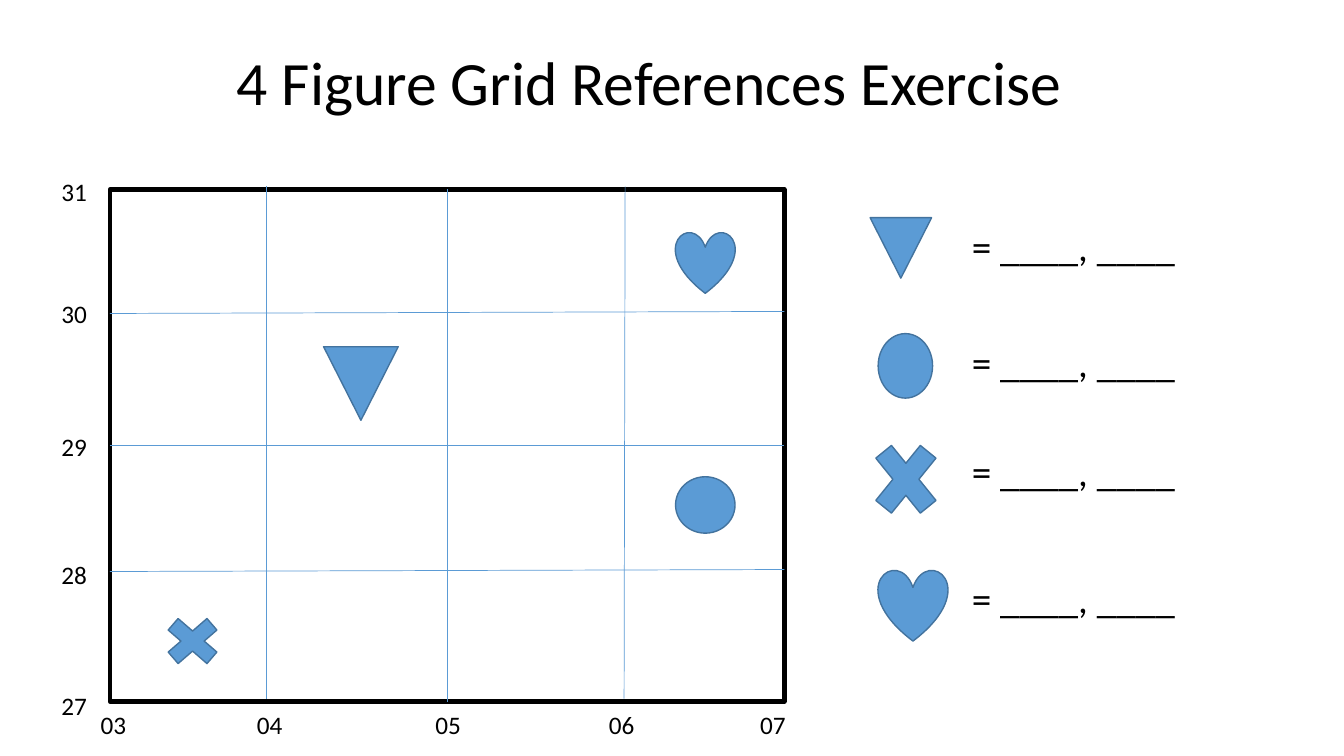
from lxml.etree import SubElement
from pptx import Presentation
from pptx.dml.color import RGBColor
from pptx.enum.shapes import MSO_CONNECTOR, MSO_SHAPE
from pptx.enum.text import MSO_ANCHOR, PP_ALIGN
from pptx.oxml.ns import qn
from pptx.util import Inches, Pt

BLACK, BLUE, EDGE = "000000", "5B9BD5", "43739E"
MERGE = MSO_SHAPE.FLOWCHART_MERGE
DISC = MSO_SHAPE.FLOWCHART_CONNECTOR
CROSS = MSO_SHAPE.MATH_MULTIPLY
HEART = MSO_SHAPE.HEART

# Offsets from the left and top of the map
COLS = [(1.55, -0.03, 1.55, 5.05), (3.35, 0, 3.35, 5.08), (5.11, -0.03, 5.1, 5.05)]
ROWS = [(0, 1.23, 6.69, 1.21), (0, 2.54, 6.69, 2.54), (0, 3.79, 6.69, 3.77)]
EAST = {"03": -0.19, "04": 1.36, "05": 3.13, "06": 4.85, "07": 6.35}
NORTH = {"31": -0.18, "30": 1.03, "29": 2.35, "28": 3.62, "27": 4.92}
MARKS = [
    (MERGE, 2.12, 1.56, 0.74, 0.73),
    (DISC, 5.61, 2.85, 0.59, 0.56),
    (CROSS, 0.45, 4.16, 0.74, 0.64),
    (HEART, 5.61, 0.42, 0.59, 0.61),
]

# Offsets from the left and top of the answer key, then the text top
KEYS = [
    (MERGE, 0.07, 0, 0.61, 0.6, 0),
    (DISC, 0.15, 1.15, 0.54, 0.64, 1.15),
    (CROSS, 0, 2.07, 0.85, 1.05, 2.23),
    (HEART, 0.15, 3.49, 0.69, 0.71, 3.49),
]


def color(code):
    return RGBColor.from_string(code)


def style(part, size, **extra):
    """Format the first paragraph of a text shape."""
    para = part.text_frame.paragraphs[0]
    for name, value in extra.items():
        setattr(para, name, value)
    for name, value in {"name": "Calibri", "size": Pt(size)}.items():
        setattr(para.font, name, value)
    para.font.color.rgb = color(BLACK)


def label(slide, text, left, top, width, height, size):
    box = slide.shapes.add_textbox(*map(Inches, (left, top, width, height)))
    box.text_frame.word_wrap = True
    box.text_frame.text = text
    style(box, size)


def shape(slide, kind, left, top, width, height, fill=BLUE, edge=EDGE, weight=1):
    part = slide.shapes.add_shape(kind, *map(Inches, (left, top, width, height)))
    part.shadow.inherit = False
    if fill:
        part.fill.solid()
        part.fill.fore_color.rgb = color(fill)
    else:
        part.fill.background()
    part.line.color.rgb = color(edge)
    part.line.width = Pt(weight)


def rule(slide, *ends):
    line = slide.shapes.add_connector(MSO_CONNECTOR.STRAIGHT, *map(Inches, ends))
    line.line.color.rgb = color(BLUE)
    line.line.width = Pt(0.5)
    SubElement(line._element.spPr, qn("a:effectLst"))


def heading(slide, left, top, width, height):
    title = slide.shapes.title
    box = dict(left=left, top=top, width=width, height=height)
    for name, value in box.items():
        setattr(title, name, Inches(value))
    title.text_frame.text = "4 Figure Grid References Exercise"
    title.text_frame.vertical_anchor = MSO_ANCHOR.MIDDLE
    style(title, 44, alignment=PP_ALIGN.CENTER, line_spacing=0.9)


def grid(slide, left, top, width, height):
    """Draw the framed map with its lines, symbols and axis numbers."""
    shape(slide, MSO_SHAPE.RECTANGLE, left, top, width, height, None, BLACK, 3)
    for x1, y1, x2, y2 in ROWS + COLS:
        rule(slide, left + x1, top + y1, left + x2, top + y2)
    for kind, x, y, wide, high in MARKS:
        shape(slide, kind, left + x, top + y, wide, high)
    for text, x in EAST.items():
        label(slide, text, left + x, top + height + 0.03, 0.51, 0.4, 18)
    for text, y in NORTH.items():
        label(slide, text, left - 0.58, top + y, 0.51, 0.4, 18)


def answers(slide, left, top, width):
    for kind, x, y, wide, high, drop in KEYS:
        shape(slide, kind, left + x, top + y, wide, high)
        label(slide, "= ____, ____", left + 0.98, top + drop, width - 0.98, 0.57, 28)


def main():
    deck = Presentation()
    deck.slide_width, deck.slide_height = Inches(13.33), Inches(7.5)
    slide = deck.slides.add_slide(deck.slide_layouts[5])
    heading(slide, 0.92, 0.4, 11.05, 0.89)
    grid(slide, 1.09, 1.88, 6.69, 5.08)
    answers(slide, 8.56, 2.16, 3.82)
    deck.save("out.pptx")


if __name__ == "__main__":
    main()
